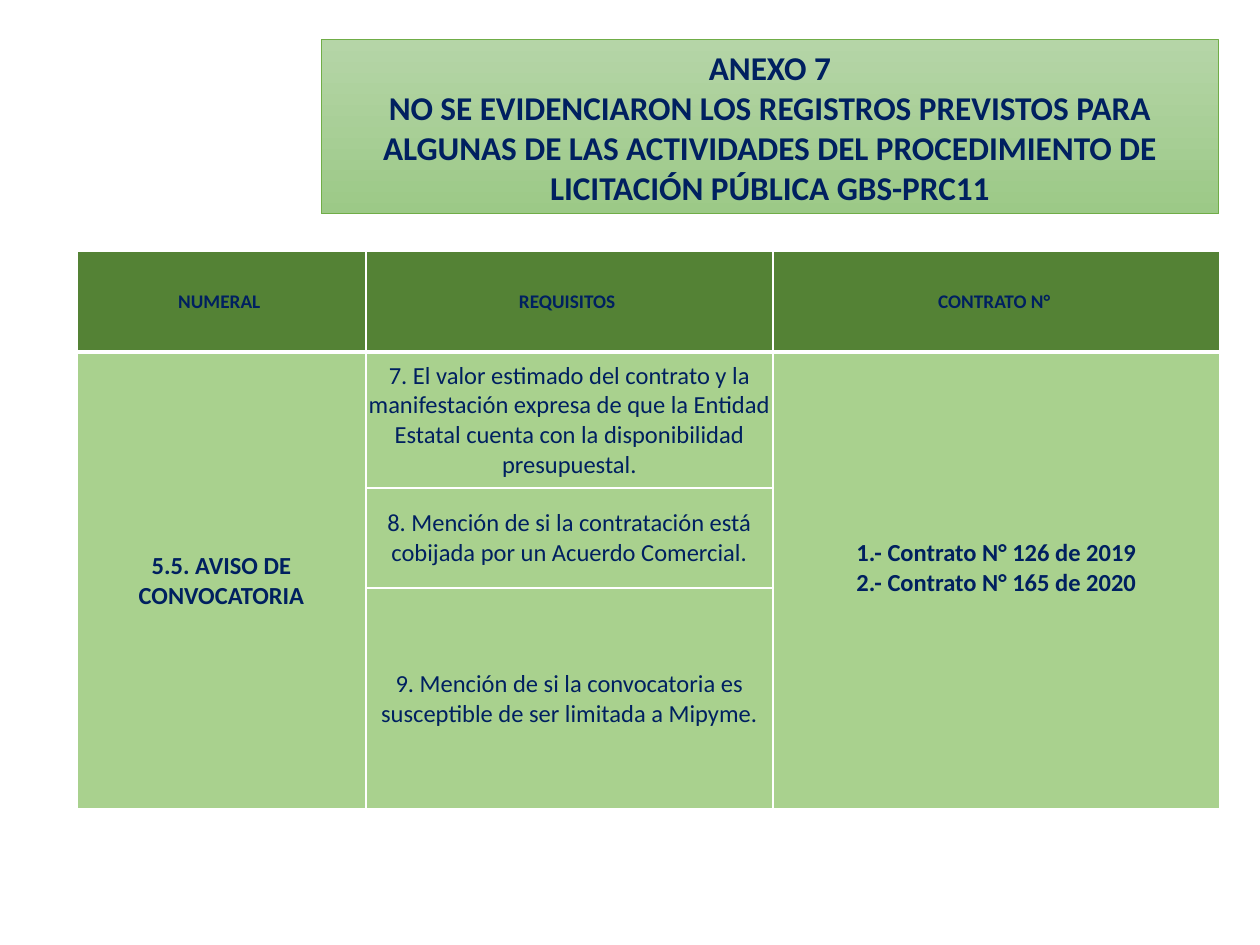
from lxml.etree import SubElement
from pptx import Presentation
from pptx.dml.color import RGBColor
from pptx.enum.shapes import MSO_SHAPE
from pptx.enum.text import MSO_ANCHOR, MSO_AUTO_SIZE, PP_ALIGN
from pptx.oxml.ns import qn
from pptx.util import Pt

PX = 914400 // 126
NAVY, GREEN, DARK, LIGHT, WHITE = "002060", "70AD47", "548235", "A9D18E", "FFFFFF"


def paint(color, code):
    color.rgb = RGBColor.from_string(code)


def write(frame, lines, size, bold):
    """Fill a text frame with centred lines."""
    frame.word_wrap = True
    for i, line in enumerate(lines):
        para = frame.paragraphs[0] if i == 0 else frame.add_paragraph()
        para.alignment = PP_ALIGN.CENTER
        run = para.add_run()
        run.text = line
        run.font.name = "Calibri"
        run.font.size = Pt(size)
        run.font.bold = bold
        paint(run.font.color, NAVY)


prs = Presentation()
prs.slide_width, prs.slide_height = 1260 * PX, 945 * PX
slide = prs.slides.add_slide(prs.slide_layouts[6])

# Title
title = slide.shapes.add_shape(
    MSO_SHAPE.RECTANGLE, 321 * PX, 40 * PX, 898 * PX, 174 * PX)
title.shadow.inherit = False
title.fill.gradient()
title.fill.gradient_angle = 270
for stop, code in zip(title.fill.gradient_stops, ("B5D5A7", "9CC987")):
    paint(stop.color, code)
paint(title.line.color, GREEN)
title.line.width = Pt(0.5)
title.text_frame.vertical_anchor = MSO_ANCHOR.MIDDLE
title.text_frame.auto_size = MSO_AUTO_SIZE.SHAPE_TO_FIT_TEXT
write(title.text_frame, [
    "ANEXO 7",
    "NO SE EVIDENCIARON LOS REGISTROS PREVISTOS PARA ALGUNAS DE LAS "
    "ACTIVIDADES DEL PROCEDIMIENTO DE LICITACIÓN PÚBLICA GBS-PRC11",
], 19, True)

# Table
widths = (289, 407, 447)
heights = (101, 136, 100, 221)
table = slide.shapes.add_table(
    4, 3, 77 * PX, 251 * PX, sum(widths) * PX, sum(heights) * PX).table
table.first_row = table.horz_banding = False
for col, width in zip(table.columns, widths):
    col.width = width * PX
for row, height in zip(table.rows, heights):
    row.height = height * PX

for r in range(4):
    for c in range(3):
        cell = table.cell(r, c)
        cell.vertical_anchor = MSO_ANCHOR.MIDDLE
        cell.margin_left = cell.margin_right = cell.margin_top = PX
        cell.margin_bottom = 0
        props = cell._tc.get_or_add_tcPr()
        for side in "LRTB":
            heavy = (r, side) in ((0, "B"), (1, "T"))
            edge = SubElement(props, qn(f"a:ln{side}"), w=str(Pt(3 if heavy else 1)))
            fill = SubElement(edge, qn("a:solidFill"))
            SubElement(fill, qn("a:srgbClr"), val=WHITE)
        cell.fill.solid()
        paint(cell.fill.fore_color, LIGHT if r else DARK)

for c in (0, 2):
    table.cell(1, c).merge(table.cell(3, c))
table.cell(1, 2).margin_bottom = 26 * PX

for c, head in enumerate(("NUMERAL ", "REQUISITOS ", "CONTRATO N° ")):
    write(table.cell(0, c).text_frame, [head], 11, True)
write(table.cell(1, 0).text_frame, ["5.5. AVISO DE CONVOCATORIA"], 14, True)
write(table.cell(1, 2).text_frame,
      ["1.- Contrato N° 126 de 2019", "2.- Contrato N° 165 de 2020"], 14, True)
needs = (
    "7. El valor estimado del contrato y la manifestación expresa de que la "
    "Entidad Estatal cuenta con la disponibilidad presupuestal.",
    "8. Mención de si la contratación está cobijada por un Acuerdo Comercial.",
    "9. Mención de si la convocatoria es susceptible de ser limitada a Mipyme.",
)
for r, need in enumerate(needs, 1):
    write(table.cell(r, 1).text_frame, [need], 14, False)

prs.save("out.pptx")
